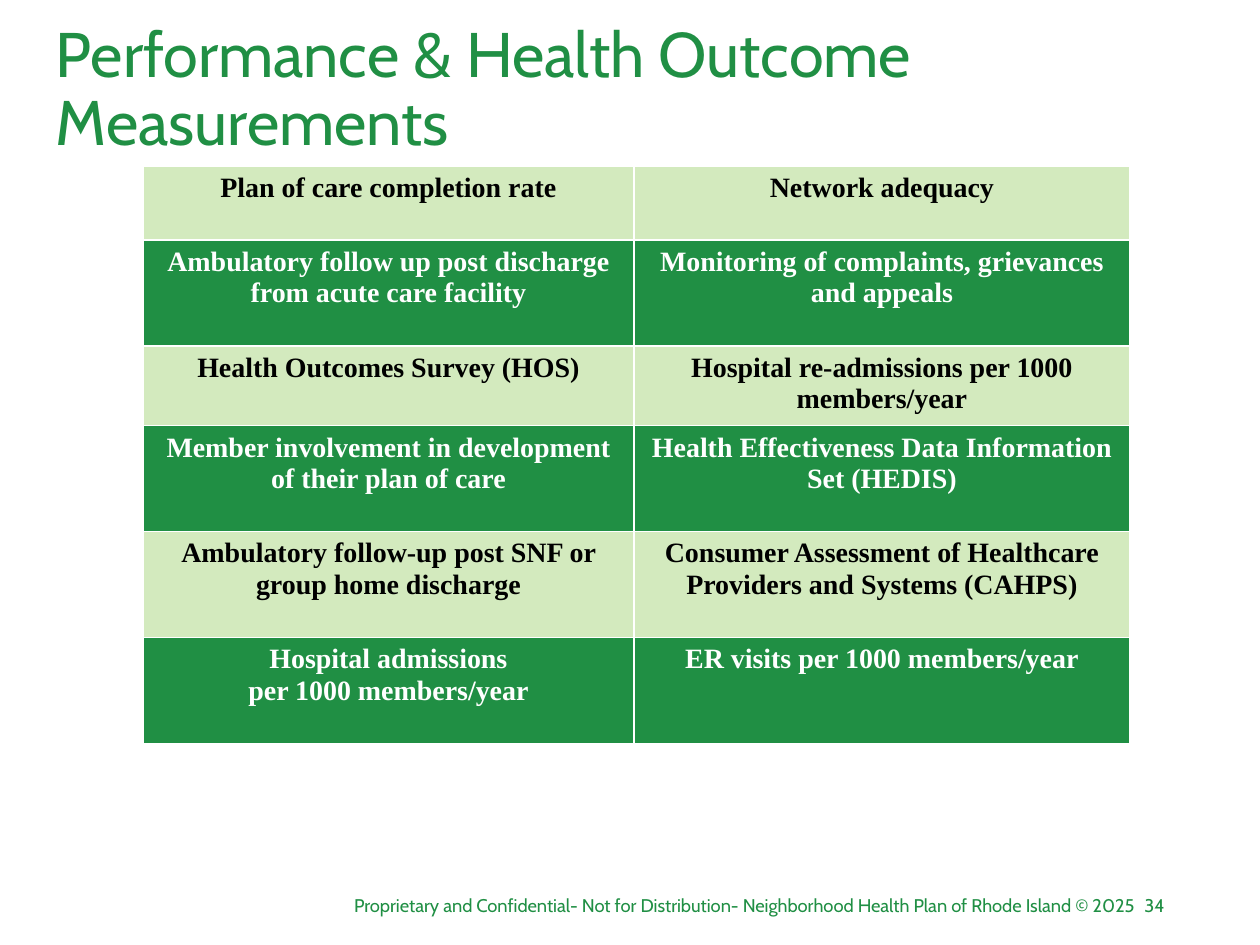
import pptx
import pptx.util
import pptx.dml.color
import pptx.enum.text
import pptx.oxml.ns
from lxml import etree

SCALE = 914400 / 126  # EMU per px
COLORS = {"green": "208F44", "lime": "7FC242", "white": "FFFFFF", "black": "000000"}
ALIGN = pptx.enum.text.PP_ALIGN
MEASURES = [
    ("Plan of care completion rate", "Network adequacy"),
    ("Ambulatory follow up post discharge from acute care facility",
     "Monitoring of complaints, grievances and appeals"),
    ("Health Outcomes Survey (HOS)", "Hospital re-admissions per 1000 members/year"),
    ("Member involvement in development of their plan of care",
     "Health Effectiveness Data Information Set (HEDIS)"),
    ("Ambulatory follow-up post SNF or group home discharge",
     "Consumer Assessment of Healthcare Providers and Systems (CAHPS)"),
    ("Hospital admissions\nper 1000 members/year", "ER visits per 1000 members/year"),
]


def px(length):
    return pptx.util.Emu(round(length * SCALE))


def color(name):
    return pptx.dml.color.RGBColor.from_string(COLORS[name])


def write(frame, text, size, font, ink, align, bold=False):
    """Put each line of text in its own paragraph."""
    for index, line in enumerate(text.split("\n")):
        para = frame.add_paragraph() if index else frame.paragraphs[0]
        para.alignment = align
        span = para.add_run()
        span.text = line
        span.font.size = pptx.util.Pt(size)
        span.font.name = font
        span.font.bold = bold
        span.font.color.rgb = color(ink)


def add_title(page, left, top, width, height):
    box = page.shapes.title
    box.left, box.top, box.width, box.height = map(px, (left, top, width, height))
    frame = box.text_frame
    frame.word_wrap = True
    frame.auto_size = pptx.enum.text.MSO_AUTO_SIZE.NONE
    frame.vertical_anchor = pptx.enum.text.MSO_ANCHOR.MIDDLE
    write(frame, "Performance & Health Outcome Measurements", 36, "Cabin", "green", ALIGN.LEFT)
    frame.paragraphs[0].line_spacing = 0.9


def style_cell(cell, fill, alpha=None):
    """Fill the cell, optionally see-through, and draw white borders."""
    cell.fill.solid()
    cell.fill.fore_color.rgb = color(fill)
    qn = pptx.oxml.ns.qn
    props = cell._tc.get_or_add_tcPr()
    if alpha:
        etree.SubElement(props.find(".//" + qn("a:srgbClr")), qn("a:alpha"), val=str(alpha * 1000))
    for index, side in enumerate(("a:lnL", "a:lnR", "a:lnT", "a:lnB")):
        border = etree.Element(qn(side), w=str(pptx.util.Pt(1)))
        paint = etree.SubElement(border, qn("a:solidFill"))
        etree.SubElement(paint, qn("a:srgbClr"), val=COLORS["white"])
        props.insert(index, border)


def add_measures(page, left, top, column_widths, row_heights):
    holder = page.shapes.add_table(len(row_heights), len(column_widths), px(left), px(top),
                                   px(sum(column_widths)), px(sum(row_heights)))
    table = holder.table
    table.first_row = table.horz_banding = False
    for column, width in zip(table.columns, column_widths):
        column.width = px(width)
    for index, (row, height, texts) in enumerate(zip(table.rows, row_heights, MEASURES)):
        row.height = px(height)
        fill, alpha, ink = ("green", None, "white") if index % 2 else ("lime", 34, "black")
        for cell, text in zip(row.cells, texts):
            style_cell(cell, fill, alpha)
            write(cell.text_frame, text, 16, "Times New Roman", ink, ALIGN.CENTER, bold=True)


def add_footer(page, top, height):
    notice = ("Proprietary and Confidential- Not for Distribution- "
              "Neighborhood Health Plan of Rhode Island © 2025")
    for text, left, width in (("34", 1119, 58), (notice, 315, 833)):
        box = page.shapes.add_textbox(px(left), px(top), px(width), px(height))
        box.text_frame.word_wrap = True
        write(box.text_frame, text, 10.5, "Cabin", "green", ALIGN.RIGHT)


def main():
    deck = pptx.Presentation()
    deck.slide_width, deck.slide_height = px(1260), px(945)
    page = deck.slides.add_slide(deck.slide_layouts[5])
    add_footer(page, 888, 35)
    add_title(page, 43, 0, 1086, 183)
    add_measures(page, 143, 166, (491, 496), (74, 106, 74, 106, 106, 106))
    deck.save("out.pptx")


if __name__ == "__main__":
    main()
